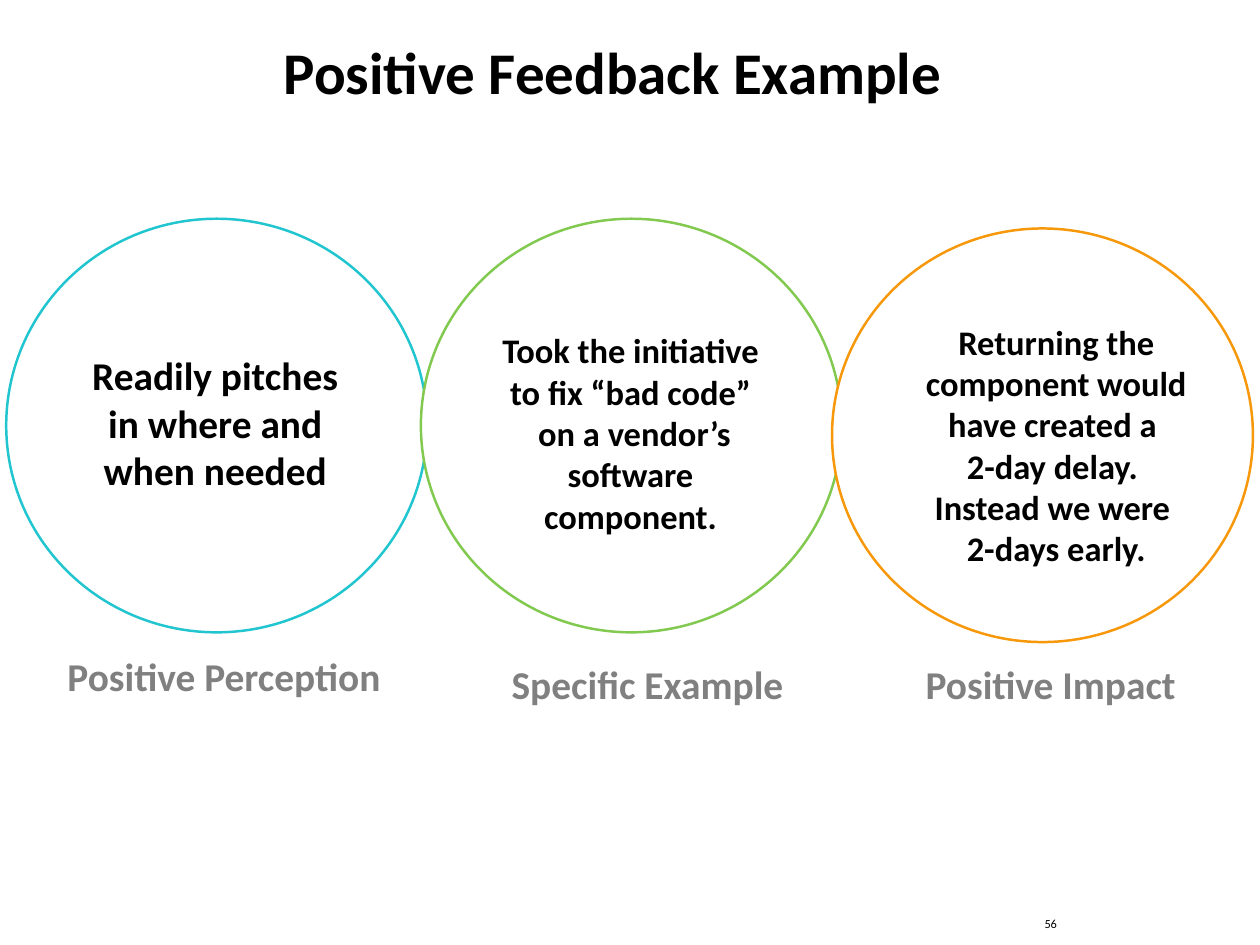
"""Build the positive feedback slide with its three linked circles."""
from dataclasses import dataclass

from pptx import Presentation
from pptx.dml.color import RGBColor
from pptx.enum.shapes import MSO_SHAPE
from pptx.enum.text import PP_ALIGN
from pptx.slide import Slide
from pptx.util import Inches, Pt

OVAL = MSO_SHAPE.OVAL
LEFT, CENTER = PP_ALIGN.LEFT, PP_ALIGN.CENTER
BLACK = RGBColor(0, 0, 0)
WHITE = RGBColor(255, 255, 255)
GRAY = RGBColor(128, 128, 128)
TEAL = RGBColor(0x21, 0xC5, 0xCF)
GREEN = RGBColor(0x82, 0xC9, 0x50)
ORANGE = RGBColor(0xF7, 0x98, 0x0B)


@dataclass
class Ring:
    left: float
    top: float
    color: RGBColor


@dataclass
class Label:
    text: str
    left: float
    top: float
    width: float
    height: float
    size: int
    color: RGBColor = BLACK
    inset: float = 0.04
    wrap: bool = True
    bold: bool = True
    align: PP_ALIGN = CENTER


RINGS = [
    Ring(0.07, 2.47, TEAL),
    Ring(4.75, 2.47, GREEN),
    Ring(9.39, 2.58, ORANGE),
]

LABELS = [
    Label("Positive Feedback Example", 0.4, 0.36, 13.03, 0.95, 48, inset=0.07),
    Label("56", 11.69, 10.3, 1, 0.3, 10, inset=0.1, bold=False, align=LEFT),
    Label("Readily pitches in where and when needed",
          0.89, 3.93, 3.08, 3.32, 32),
    Label("Took the initiative \vto fix “bad code” \von a vendor’s software "
          "\vcomponent. ", 5.33, 3.68, 3.66, 3.32, 28),
    Label("Returning the component would have created a \v2-day delay. "
          "\vInstead we were \v2-days early.", 10.21, 3.58, 3.42, 3.32, 28),
    Label("Positive Perception", 0.64, 7.32, 3.78, 0.64, 32, GRAY, wrap=False),
    Label("Specific Example", 5.66, 7.41, 3.3, 0.64, 32, GRAY, wrap=False),
    Label("Positive Impact", 10.33, 7.41, 3.06, 0.64, 32, GRAY, wrap=False),
]


def draw_ring(slide: Slide, ring: Ring) -> None:
    shape = slide.shapes.add_shape(
        OVAL, Inches(ring.left), Inches(ring.top), Inches(4.75), Inches(4.67))
    shape.shadow.inherit = False
    shape.fill.solid()
    shape.fill.fore_color.rgb = WHITE
    shape.line.color.rgb = ring.color
    shape.line.width = Pt(2)


def draw_label(slide: Slide, label: Label) -> None:
    box = slide.shapes.add_textbox(
        Inches(label.left), Inches(label.top),
        Inches(label.width), Inches(label.height))
    frame = box.text_frame
    frame.word_wrap = label.wrap
    frame.margin_left = frame.margin_right = Inches(label.inset)
    frame.margin_top = frame.margin_bottom = Inches(0.04)
    frame.text = label.text
    para = frame.paragraphs[0]
    para.alignment = label.align
    para.font.name = "Calibri"
    para.font.size = Pt(label.size)
    para.font.bold = label.bold
    para.font.color.rgb = label.color


def main() -> None:
    deck = Presentation()
    deck.slide_width, deck.slide_height = Inches(14.22), Inches(10.67)
    slide = deck.slides.add_slide(deck.slide_layouts[6])
    for ring in RINGS:
        draw_ring(slide, ring)
    for label in LABELS:
        draw_label(slide, label)
    deck.save("out.pptx")


if __name__ == "__main__":
    main()
